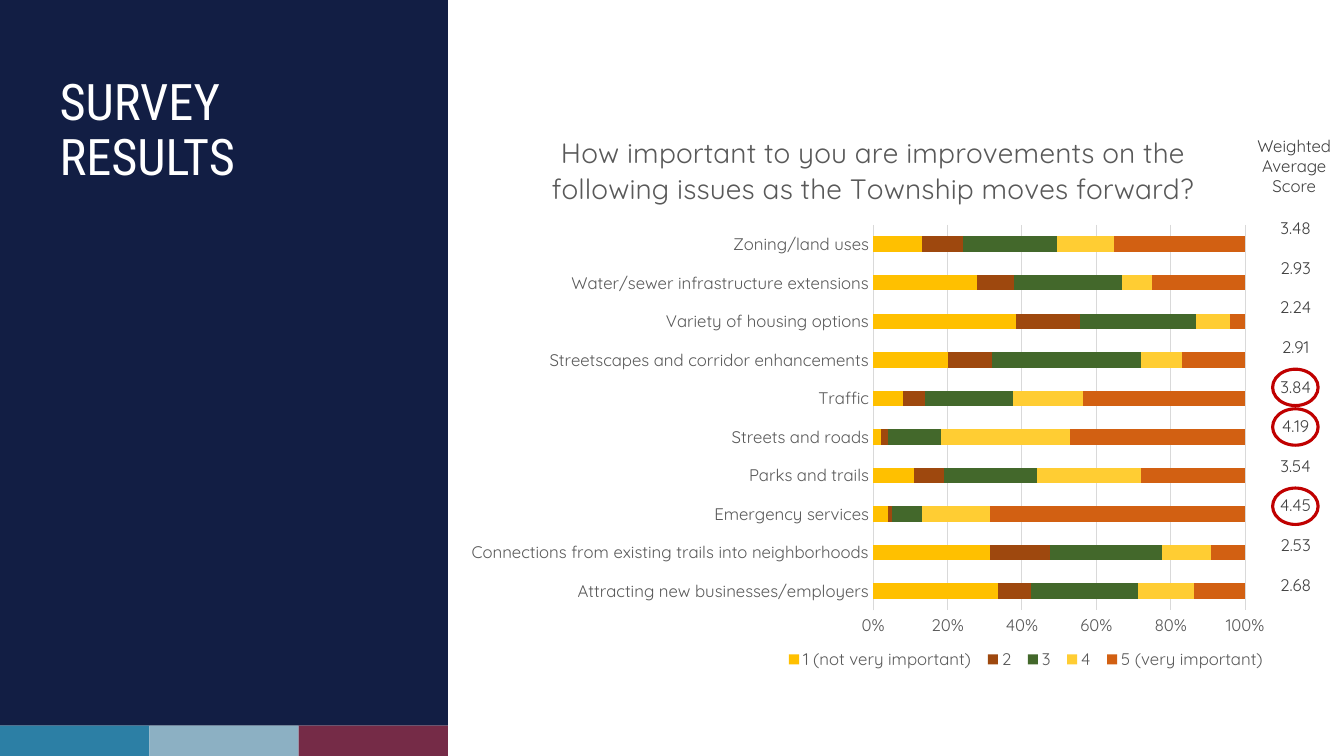
"""Build the survey results slide: side panel, stacked bar chart and weighted scores."""
import pptx
import pptx.chart.data
import pptx.dml.color
import pptx.enum.chart
import pptx.enum.shapes
import pptx.enum.text
import pptx.oxml.ns
import pptx.util
import lxml.etree

Pt = pptx.util.Pt
qn = pptx.oxml.ns.qn
SHAPE = pptx.enum.shapes.MSO_SHAPE
ALIGN = pptx.enum.text.PP_ALIGN
KIND = pptx.enum.chart

HEAD = "SURVEY RESULTS"
ASK = ("How important to you are improvements on the following issues "
       "as the Township moves forward?")
LABEL = "Weighted Average Score"
BODY = "Quicksand"
STRIPS = ["2C7FA5", "8CB0C3", "752B47"]
SCALE = [("1 (not very important)", "FFC000"), ("2", "9E480E"), ("3", "43682B"),
         ("4", "FFCD33"), ("5 (very important)", "D26012")]
ISSUES = [
    ("Zoning/land uses", "3.48", (13, 11, 25, 15, 35)),
    ("Water/sewer infrastructure extensions", "2.93", (28, 10, 29, 8, 25)),
    ("Variety of housing options", "2.24", (38, 17, 31, 9, 4)),
    ("Streetscapes and corridor enhancements", "2.91", (20, 12, 40, 11, 17)),
    ("Traffic", "3.84", (8, 6, 24, 19, 44)),
    ("Streets and roads", "4.19", (2, 2, 14, 34, 46)),
    ("Parks and trails", "3.54", (11, 8, 25, 28, 28)),
    ("Emergency services", "4.45", (4, 1, 8, 18, 68)),
    ("Connections from existing trails into neighborhoods", "2.53", (31, 16, 30, 13, 9)),
    ("Attracting new businesses/employers", "2.68", (34, 9, 29, 15, 14)),
]
TOP = {"Traffic", "Streets and roads", "Emergency services"}
WIDE, HIGH, SIDE, STRIP = 960, 540, 320, 21.6
FIRST, STEP = 152, 28.3


def tint(code):
    return pptx.dml.color.RGBColor.from_string(code)


def style(font, size, code, face=BODY):
    font.size, font.name, font.bold = Pt(size), face, False
    font.color.rgb = tint(code)


def shape(kind, box, fill=None, line=None):
    item = slide.shapes.add_shape(kind, *map(Pt, box))
    item.shadow.inherit = False
    if fill:
        item.fill.solid()
        item.fill.fore_color.rgb = tint(fill)
    else:
        item.fill.background()
    if line:
        item.line.color.rgb = tint(line)
        item.line.width = Pt(2.25)
    else:
        item.line.fill.background()


def text(words, box, size, code, face=BODY, align=ALIGN.CENTER):
    frame = slide.shapes.add_textbox(*map(Pt, box)).text_frame
    frame.word_wrap = True
    para = frame.paragraphs[0]
    para.text, para.alignment = words, align
    style(para.font, size, code, face)
    return para


def place(owner, prior, inner=False, **spots):
    for old in owner.findall(qn("c:layout")):
        owner.remove(old)
    layout = lxml.etree.Element(qn("c:layout"))
    manual = lxml.etree.SubElement(layout, qn("c:manualLayout"))
    if inner:
        lxml.etree.SubElement(manual, qn("c:layoutTarget")).set("val", "inner")
    for tag in ("xMode", "yMode"):
        lxml.etree.SubElement(manual, qn("c:" + tag)).set("val", "edge")
    for tag, value in spots.items():
        lxml.etree.SubElement(manual, qn("c:" + tag)).set("val", str(value))
    if prior:
        owner.find(qn(prior)).addnext(layout)
    else:
        owner.insert(0, layout)


def draw(box):
    data = pptx.chart.data.CategoryChartData()
    rows = ISSUES[::-1]
    data.categories = [row[0] for row in rows]
    for i, (name, _) in enumerate(SCALE):
        data.add_series(name, [row[2][i] for row in rows])
    chart = slide.shapes.add_chart(
        KIND.XL_CHART_TYPE.BAR_STACKED_100, *map(Pt, box), data).chart
    style(chart.font, 10, "000000")
    plot = chart.plots[0]
    plot.gap_width, plot.overlap, plot.vary_by_categories = 150, 100, False
    for bar, (_, code) in zip(plot.series, SCALE):
        bar.format.fill.solid()
        bar.format.fill.fore_color.rgb = tint(code)

    chart.has_title = True
    para = chart.chart_title.text_frame.paragraphs[0]
    para.text = ASK
    style(para.font, 20, "595959")
    chart.has_legend = True
    chart.legend.position = KIND.XL_LEGEND_POSITION.BOTTOM
    chart.legend.include_in_layout = False
    style(chart.legend.font, 12, "595959")

    cats, vals = chart.category_axis, chart.value_axis
    for axis in (cats, vals):
        axis.major_tick_mark = axis.minor_tick_mark = KIND.XL_TICK_MARK.NONE
        style(axis.tick_labels.font, 12, "595959")
    vals.has_major_gridlines, vals.major_unit = True, 0.2
    vals.tick_labels.number_format = "0%"
    vals.tick_labels.number_format_is_linked = False
    vals.format.line.fill.background()
    for line in (cats.format.line, vals.major_gridlines.format.line):
        line.color.rgb, line.width = tint("D9D9D9"), Pt(0.75)

    root = chart.element
    place(root.find(".//" + qn("c:plotArea")), None, True, x=0.505, y=0.2, w=0.45, h=0.67)
    place(root.find(".//" + qn("c:title")), "c:tx", x=0.11, y=0.03)
    place(root.find(".//" + qn("c:legend")), "c:legendPos", x=0.39, y=0.93, w=0.6, h=0.05)


deck = pptx.Presentation()
deck.slide_width, deck.slide_height = Pt(WIDE), Pt(HIGH)
slide = deck.slides.add_slide(deck.slide_layouts[6])

shape(SHAPE.RECTANGLE, (0, 0, SIDE, HIGH - STRIP), "121E44")
part = SIDE / len(STRIPS)
for i, code in enumerate(STRIPS):
    shape(SHAPE.RECTANGLE, (i * part, HIGH - STRIP, part, STRIP), code)
text(HEAD, (35.5, 51.5, 240, 411), 36, "FFFFFF", "Roboto Condensed", ALIGN.LEFT).line_spacing = 0.9

draw((325.5, 78.5, 590.5, 411))

text(LABEL, (888.5, 93.5, 72, 51), 12, "404040")
for i, (issue, score, _) in enumerate(ISSUES):
    y = FIRST + i * STEP
    text(score, (905, y, 41, 21.6), 12, "404040")
    if issue in TOP:
        shape(SHAPE.OVAL, (909, y - 1.5, 32.5, 26), line="C00000")

deck.save("out.pptx")
